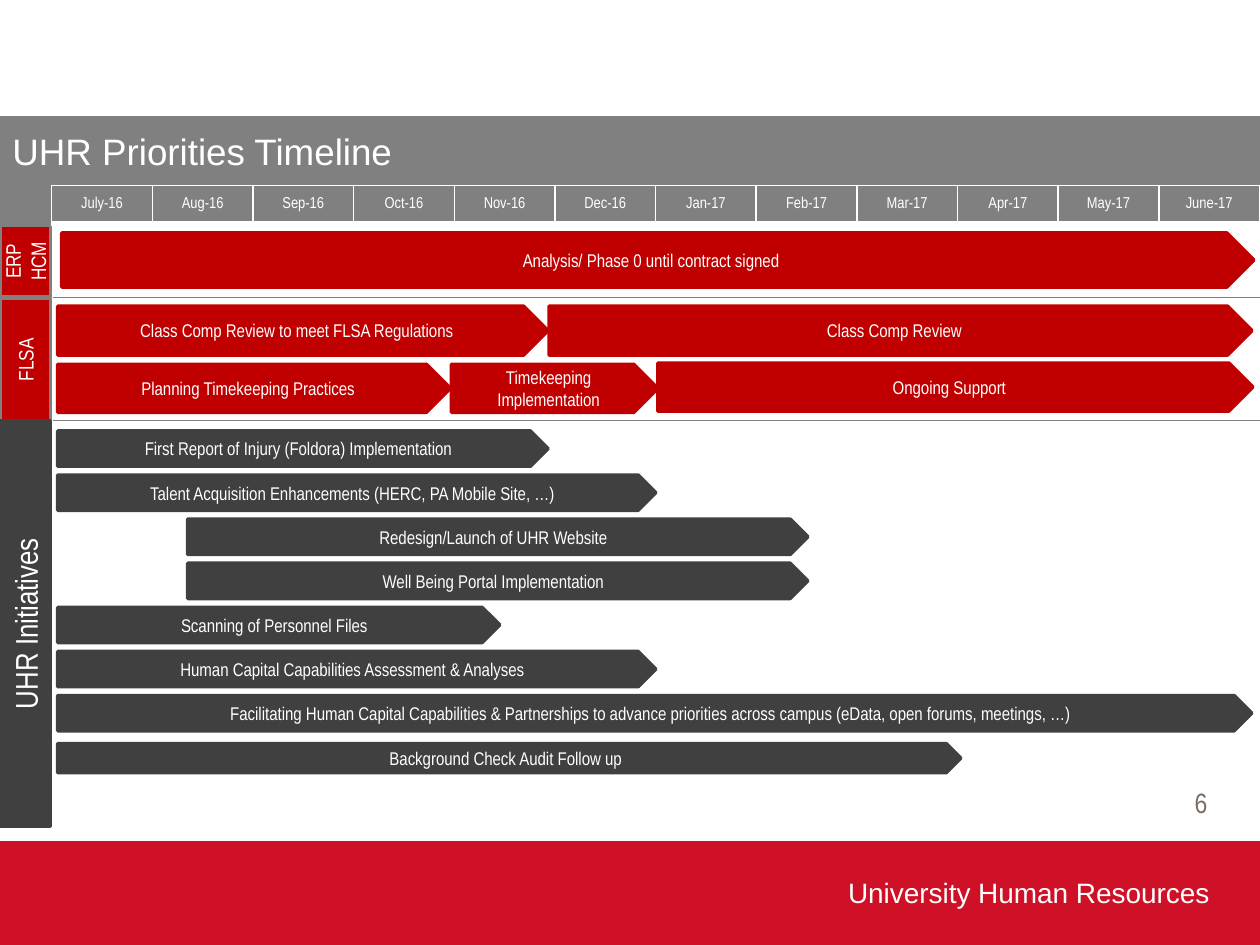
from lxml import etree
from pptx import Presentation
from pptx.dml.color import RGBColor
from pptx.enum.shapes import MSO_CONNECTOR, MSO_SHAPE
from pptx.enum.text import MSO_ANCHOR, PP_ALIGN
from pptx.oxml.ns import qn
from pptx.util import Inches, Pt

RECT, ARROW_BAR = MSO_SHAPE.RECTANGLE, MSO_SHAPE.PENTAGON
STRAIGHT = MSO_CONNECTOR.STRAIGHT
LEFT, CENTER, RIGHT = PP_ALIGN.LEFT, PP_ALIGN.CENTER, PP_ALIGN.RIGHT
MIDDLE, TOP = MSO_ANCHOR.MIDDLE, MSO_ANCHOR.TOP

WIDTH, HEIGHT = 10, 7.5
GRID_LEFT, GRID_TOP = 0.41, 1.67
MONTHS = ["July-16", "Aug-16", "Sep-16", "Oct-16", "Nov-16", "Dec-16",
          "Jan-17", "Feb-17", "Mar-17", "Apr-17", "May-17", "June-17"]
MONTH = (WIDTH - GRID_LEFT) / len(MONTHS)
ROW = 0.35

WHITE, GREY, RED, DARK = "FFFFFF", "808080", "C00000", "404040"
FOOTER_RED, NUMBER_GREY = "CE1126", "7A6E67"
WIDE, NARROW = "Arial", "Arial Narrow"


def rgb(value):
    return RGBColor.from_string(value)


def assign(target, values):
    for name, value in values.items():
        setattr(target, name, value)


def share(left, top, width, height):
    """Box given as shares of the slide."""
    return [Inches(v) for v in (left * WIDTH, top * HEIGHT,
                                width * WIDTH, height * HEIGHT)]


def grid(month, row, months, rows):
    """Box given in month columns and lane rows."""
    return [Inches(v) for v in (GRID_LEFT + month * MONTH, GRID_TOP + row * ROW,
                                months * MONTH, rows * ROW)]


class Timeline:
    def __init__(self, slide):
        self.slide = slide
        self.shapes = slide.shapes

    def set_text(self, frame, text, size, font=NARROW, color=WHITE, align=CENTER):
        paragraph = frame.paragraphs[0]
        paragraph.text = text
        paragraph.alignment = align
        assign(paragraph.font, {"size": Pt(size), "name": font})
        paragraph.font.color.rgb = rgb(color)

    def block(self, box, fill, kind=RECT, outlined=True):
        block = self.shapes.add_shape(kind, *box)
        block.shadow.inherit = False
        block.fill.solid()
        block.fill.fore_color.rgb = rgb(fill)
        assign(block.text_frame, {"word_wrap": True, "vertical_anchor": MIDDLE})
        if outlined:
            block.line.color.rgb = rgb(fill)
            block.line.width = Pt(2)
        else:
            block.line.fill.background()
        return block

    def label(self, box, text, size, fill, outline):
        """Side label that reads upwards."""
        label = self.block(box, fill)
        label.line.color.rgb = rgb(outline)
        self.set_text(label.text_frame, text, size)
        label.text_frame._txBody.bodyPr.set("vert", "vert270")

    def bar(self, text, fill, *cells):
        bar = self.block(grid(*cells), fill, ARROW_BAR)
        self.set_text(bar.text_frame, text, 10.5)

    def note(self, box, text, size, wrap=True, **style):
        note = self.shapes.add_textbox(*box)
        assign(note.text_frame, {"word_wrap": wrap, "vertical_anchor": TOP})
        self.set_text(note.text_frame, text, size, **style)

    def divider(self, row):
        left, top, width, _ = grid(0.01, row, len(MONTHS) - 0.01, 0)
        divider = self.shapes.add_connector(STRAIGHT, left, top, left + width, top)
        divider.line.color.rgb = rgb(GREY)
        divider.line.width = Pt(0.75)
        etree.SubElement(divider._element.spPr, qn("a:effectLst"))

    def month_header(self, box):
        table = self.shapes.add_table(1, len(MONTHS), *box).table
        assign(table, {"first_row": False, "horz_banding": False})
        for cell, month in zip(table.rows[0].cells, MONTHS):
            assign(cell, {"margin_left": Inches(0.07), "margin_right": Inches(0.07),
                          "margin_top": Inches(0.04), "margin_bottom": Inches(0.04),
                          "vertical_anchor": MIDDLE})
            self.set_text(cell.text_frame, month, 9)
            cell.fill.solid()
            cell.fill.fore_color.rgb = rgb(GREY)
            self.borders(cell, {"lnL": 1, "lnR": 1, "lnT": 1, "lnB": 3})

    def borders(self, cell, widths):
        properties = cell._tc.get_or_add_tcPr()
        for place, (side, width) in enumerate(widths.items()):
            line = etree.Element(qn("a:" + side), w=str(Pt(width)))
            fill = etree.SubElement(line, qn("a:solidFill"))
            etree.SubElement(fill, qn("a:srgbClr"), val=WHITE)
            properties.insert(place, line)


# Text, start month, start row, months, rows
PROJECTS = [
    ("Analysis/ Phase 0 until contract signed", 0.1, 0.51, 11.84, 1.23),
    ("Class Comp Review to meet FLSA Regulations", 0.06, 2.17, 4.87, 1.11),
    ("Class Comp Review", 4.94, 2.17, 6.98, 1.11),
    ("Planning Timekeeping Practices", 0.06, 3.49, 3.9, 1.09),
    ("Timekeeping Implementation", 3.97, 3.49, 2.05, 1.09),
    ("Ongoing Support", 6.02, 3.46, 5.91, 1.09),
]
# Text, start month, months: one row each
INITIATIVES = [
    ("First Report of Injury (Foldora) Implementation", 0.06, 4.87),
    ("Talent Acquisition Enhancements (HERC, PA Mobile Site, …)", 0.06, 5.94),
    ("Redesign/Launch of UHR Website", 1.35, 6.16),
    ("Well Being Portal Implementation", 1.35, 6.16),
    ("Scanning of Personnel Files", 0.06, 4.39),
    ("Human Capital Capabilities Assessment & Analyses", 0.06, 5.94),
    ("Facilitating Human Capital Capabilities & Partnerships to advance priorities "
     "across campus (eData, open forums, meetings, …)", 0.06, 11.86),
]
FIRST_INITIATIVE_ROW = 5
# Text, size, fill, outline, start row, rows
LABELS = [
    ("ERP HCM", 12, RED, GREY, 0.34, 1.63),
    ("FLSA", 12, RED, GREY, 2, 2.77),
    ("UHR Initiatives", 18, DARK, DARK, 4.77, 9.2),
]


def main():
    deck = Presentation()
    assign(deck, {"slide_width": Inches(WIDTH), "slide_height": Inches(HEIGHT)})
    timeline = Timeline(deck.slides.add_slide(deck.slide_layouts[6]))

    # Footer
    timeline.block(share(0, 0.89, 1, 0.11), FOOTER_RED, outlined=False)
    timeline.note(share(0.66, 0.92, 0.31, 0.05), "University Human Resources", 16,
                  font=WIDE, align=RIGHT, wrap=False)
    timeline.note(share(0.84, 0.825, 0.128, 0.05), "6", 16,
                  color=NUMBER_GREY, align=RIGHT)

    # Title band
    title = timeline.block(share(0, 0.125, 1, 0.07), GREY)
    timeline.set_text(title.text_frame, "UHR Priorities Timeline", 21, WIDE, align=LEFT)

    # Side labels
    for text, size, fill, outline, row, rows in LABELS:
        _, top, _, height = grid(0, row, 0, rows)
        timeline.label((0, top, Inches(0.4), height), text, size, fill, outline)

    # Month header and dividers
    timeline.month_header(grid(0, -0.57, len(MONTHS), 0.86))
    for row in (1.97, 4.77):
        timeline.divider(row)
    timeline.block(share(0, 0.197, 0.039, 0.039), GREY)

    # Project and initiative bars
    for text, *cells in PROJECTS:
        timeline.bar(text, RED, *cells)
    for row, (text, start, months) in enumerate(INITIATIVES, FIRST_INITIATIVE_ROW):
        timeline.bar(text, DARK, start, row, months, 0.8)
    timeline.bar("Background Check Audit Follow up", DARK, 0.06, 12.09, 8.97, 0.66)

    deck.save("out.pptx")


if __name__ == "__main__":
    main()
